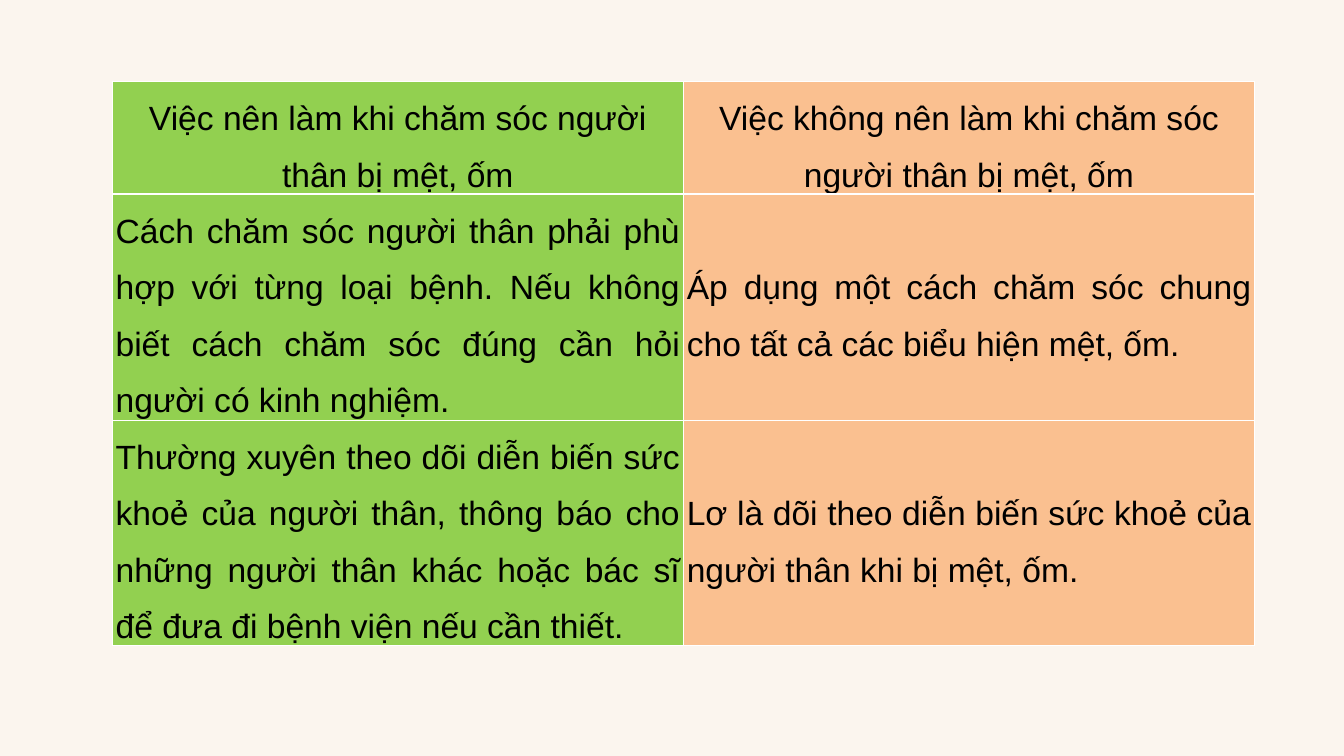
from dataclasses import dataclass

from lxml.etree import SubElement
from pptx import Presentation
from pptx.dml.color import RGBColor
from pptx.enum.text import MSO_ANCHOR, PP_ALIGN
from pptx.oxml.ns import qn
from pptx.util import Inches, Pt


@dataclass(frozen=True)
class Theme:
    background: str = "FBF5EE"
    text: str = "000000"
    border: str = "FFFFFF"
    columns: tuple = ("92D050", "FAC090")
    font: str = "Arial"
    size: int = 36
    thin: int = 1
    thick: int = 3


theme = Theme()

ROWS = [
    ("Việc nên làm khi chăm sóc người thân bị mệt, ốm",
     "Việc không nên làm khi chăm sóc người thân bị mệt, ốm"),
    ("Cách chăm sóc người thân phải phù hợp với từng loại bệnh. "
     "Nếu không biết cách chăm sóc đúng cần hỏi người có kinh nghiệm.",
     "Áp dụng một cách chăm sóc chung cho tất cả các biểu hiện mệt, ốm."),
    ("Thường xuyên theo dõi diễn biến sức khoẻ của người thân, thông báo cho "
     "những người thân khác hoặc bác sĩ để đưa đi bệnh viện nếu cần thiết.",
     "Lơ là dõi theo diễn biến sức khoẻ của người thân khi bị mệt, ốm."),
]
ROW_HEIGHTS = [1.45, 2.18, 2.9]  # minimums; rows grow to fit their text


def add_borders(cell, top, bottom):
    """Draw the four cell borders; call before setting the fill."""
    widths = {"lnL": theme.thin, "lnR": theme.thin, "lnT": top, "lnB": bottom}
    properties = cell._tc.get_or_add_tcPr()
    for side, width in widths.items():
        line = SubElement(properties, qn(f"a:{side}"), w=str(Pt(width)))
        fill = SubElement(line, qn("a:solidFill"))
        SubElement(fill, qn("a:srgbClr"), val=theme.border)


# Slide and background
presentation = Presentation()
presentation.slide_width = Inches(20)
presentation.slide_height = Inches(11.25)
slide = presentation.slides.add_slide(presentation.slide_layouts[6])
slide.background.fill.solid()
slide.background.fill.fore_color.rgb = RGBColor.from_string(theme.background)

# Table of things to do and things to avoid
table_frame = slide.shapes.add_table(
    len(ROWS), len(theme.columns), Inches(1.67), Inches(1.21), Inches(17), Inches(9))
table = table_frame.table
for row, height in zip(table.rows, ROW_HEIGHTS):
    row.height = Inches(height)
table_frame.height = Inches(9)

# Cells
for row_index, texts in enumerate(ROWS):
    is_header = row_index == 0
    for column_index, text in enumerate(texts):
        cell = table.cell(row_index, column_index)
        add_borders(cell,
                    top=theme.thick if row_index == 1 else theme.thin,
                    bottom=theme.thick if is_header else theme.thin)
        cell.fill.solid()
        cell.fill.fore_color.rgb = RGBColor.from_string(theme.columns[column_index])
        cell.margin_left = cell.margin_right = Inches(0.05)
        cell.margin_top = cell.margin_bottom = 0
        cell.vertical_anchor = MSO_ANCHOR.MIDDLE

        cell.text = text
        paragraph = cell.text_frame.paragraphs[0]
        paragraph.alignment = PP_ALIGN.CENTER if is_header else PP_ALIGN.JUSTIFY
        paragraph.line_spacing = 1.5
        paragraph.font.name = theme.font
        paragraph.font.size = Pt(theme.size)
        paragraph.font.bold = False
        paragraph.font.color.rgb = RGBColor.from_string(theme.text)

presentation.save("out.pptx")
